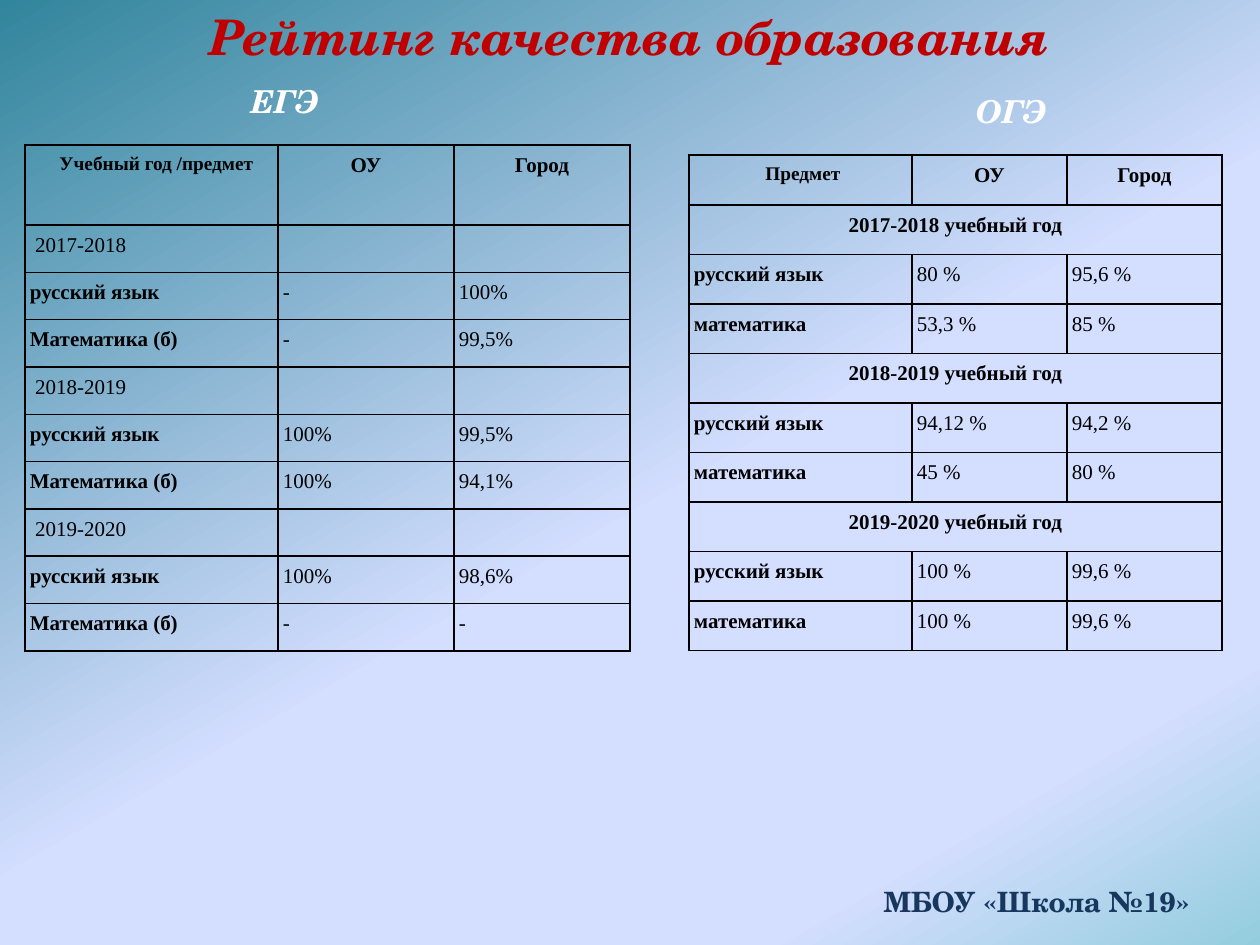
"""Build a slide that compares exam results of a school and its city."""
from lxml import etree
from pptx import Presentation
from pptx import util as u
from pptx.dml.color import RGBColor
from pptx.enum import text
from pptx.oxml import ns

SCALE = 914400 / 126
RED = RGBColor(0xC0, 0x00, 0x00)
NAVY = RGBColor(0x17, 0x37, 0x5E)
WHITE = RGBColor(0xFF, 0xFF, 0xFF)
BLACK = RGBColor(0x00, 0x00, 0x00)
TEAL = RGBColor(0x31, 0x85, 0x9C)
LILAC = RGBColor(0xD4, 0xDE, 0xFF)
AQUA = RGBColor(0x93, 0xCD, 0xDD)
STOPS = [(0, TEAL, 75), (53, LILAC, 100), (83, LILAC, 100), (100, AQUA, 100)]
SERIF, SCHOOL = "Times New Roman", "TeX Gyre Schola"
LEFT, MID = text.PP_ALIGN.LEFT, text.PP_ALIGN.CENTER
RUS, MATH, BASE = "русский язык", "математика", "Математика (б)"

EGE = [
    ["Учебный год /предмет", "ОУ", "Город"],
    [" 2017-2018", "", ""],
    [RUS, "-", "100%"],
    [BASE, "-", "99,5%"],
    [" 2018-2019", "", ""],
    [RUS, "100%", "99,5%"],
    [BASE, "100%", "94,1%"],
    [" 2019-2020", "", ""],
    [RUS, "100%", "98,6%"],
    [BASE, "-", "-"],
]
OGE = [
    ["Предмет", "ОУ", "Город"],
    ["2017-2018 учебный год"],
    [RUS, "80 %", "95,6 %"],
    [MATH, "53,3 %", "85 %"],
    ["2018-2019 учебный год"],
    [RUS, "94,12 %", "94,2 %"],
    [MATH, "45 %", "80 %"],
    ["2019-2020 учебный год"],
    [RUS, "100 %", "99,6 %"],
    [MATH, "100 %", "99,6 %"],
]


def px(num):
    return u.Emu(round(num * SCALE))


def add_node(host, tag, **attrs):
    node = etree.SubElement(host, ns.qn(tag))
    for key, val in attrs.items():
        node.set(key, str(val))
    return node


def paint_back(slide):
    fill = slide.background.fill
    fill.gradient()
    fill.gradient_angle = 300
    stops = slide.background._cSld.find(".//" + ns.qn("a:gsLst"))
    for old in list(stops):
        stops.remove(old)
    for pos, color, alpha in STOPS:
        stop = add_node(stops, "a:gs", pos=pos * 1000)
        tint = add_node(stop, "a:srgbClr", val=color)
        if alpha < 100:
            add_node(tint, "a:alpha", val=alpha * 1000)


def style(par, font, size, color, bold, slant=False, align=LEFT):
    par.alignment = align
    for run in par.runs:
        run.font.name = font
        run.font.size = u.Pt(size)
        run.font.color.rgb = color
        run.font.bold = bold
        run.font.italic = slant


def set_title(slide, words):
    title = slide.shapes.title
    title.left, title.top, title.width, title.height = map(px, (197, 0, 901, 72))
    frame = title.text_frame
    frame.text = words
    frame.word_wrap = False
    frame.auto_size = text.MSO_AUTO_SIZE.SHAPE_TO_FIT_TEXT
    frame.vertical_anchor = text.MSO_ANCHOR.MIDDLE
    style(frame.paragraphs[0], SCHOOL, 28, RED, True, True)


def add_label(slide, words, area, size, color, slant=False, align=LEFT, inset=13):
    frame = slide.shapes.add_textbox(*map(px, area)).text_frame
    frame.text = words
    frame.word_wrap = True
    frame.margin_left = px(inset)
    frame.vertical_anchor = text.MSO_ANCHOR.MIDDLE
    style(frame.paragraphs[0], SCHOOL, size, color, True, slant, align)


def edge_cell(cell):
    props = cell._tc.get_or_add_tcPr()
    for spot, side in enumerate("LRTB"):
        line = add_node(props, "a:ln" + side, w=12700)
        add_node(add_node(line, "a:solidFill"), "a:srgbClr", val=BLACK)
        props.insert(spot, line)


def fill_cell(cell, words, size, bold, align, pad):
    cell.fill.background()
    edge_cell(cell)
    cell.margin_left = px(5 + pad)
    cell.margin_right = cell.margin_top = cell.margin_bottom = px(5)
    cell.text_frame.text = words
    par = cell.text_frame.paragraphs[0]
    par.line_spacing = 1.15
    style(par, SERIF, size, BLACK, bold, align=align)
    if not words:
        par._p.get_or_add_endParaRPr().set("sz", str(size * 100))


def add_grid(slide, data, area, cols, head, pad):
    grid = slide.shapes.add_table(len(data), len(cols), *map(px, area)).table
    grid.first_row = grid.horz_banding = False
    for col, width in zip(grid.columns, cols):
        col.width = px(width)
    step = (area[3] - head) / (len(data) - 1)
    for r, vals in enumerate(data):
        grid.rows[r].height = px(step if r else head)
        wide = len(vals) == 1
        if wide:
            grid.cell(r, 0).merge(grid.cell(r, len(cols) - 1))
        for c in range(len(cols)):
            words = vals[c] if c < len(vals) else ""
            first = r == 0 and c == 0
            bold = r == 0 or wide or (c == 0 and not words.startswith(" "))
            fill_cell(grid.cell(r, c), words, 11 if first else 12, bold,
                      MID if r == 0 or wide else LEFT, pad if first else 0)


def main():
    prs = Presentation()
    prs.slide_width, prs.slide_height = px(1260), px(945)
    slide = prs.slides.add_slide(prs.slide_layouts[5])
    paint_back(slide)
    set_title(slide, "Рейтинг качества образования")
    add_label(slide, "МБОУ «Школа №19»", (837, 876, 399, 50), 16, NAVY, align=MID)
    add_label(slide, "ОГЭ", (828, 86, 318, 50), 18, WHITE, True, inset=148)
    add_grid(slide, EGE, (25, 145, 605, 506), (253, 176, 176), 80, 10)
    add_grid(slide, OGE, (689, 155, 533, 496), (223, 155, 155), 50, 5)
    add_label(slide, "ЕГЭ", (105, 76, 318, 50), 18, WHITE, True, inset=146)
    prs.save("out.pptx")


if __name__ == "__main__":
    main()
